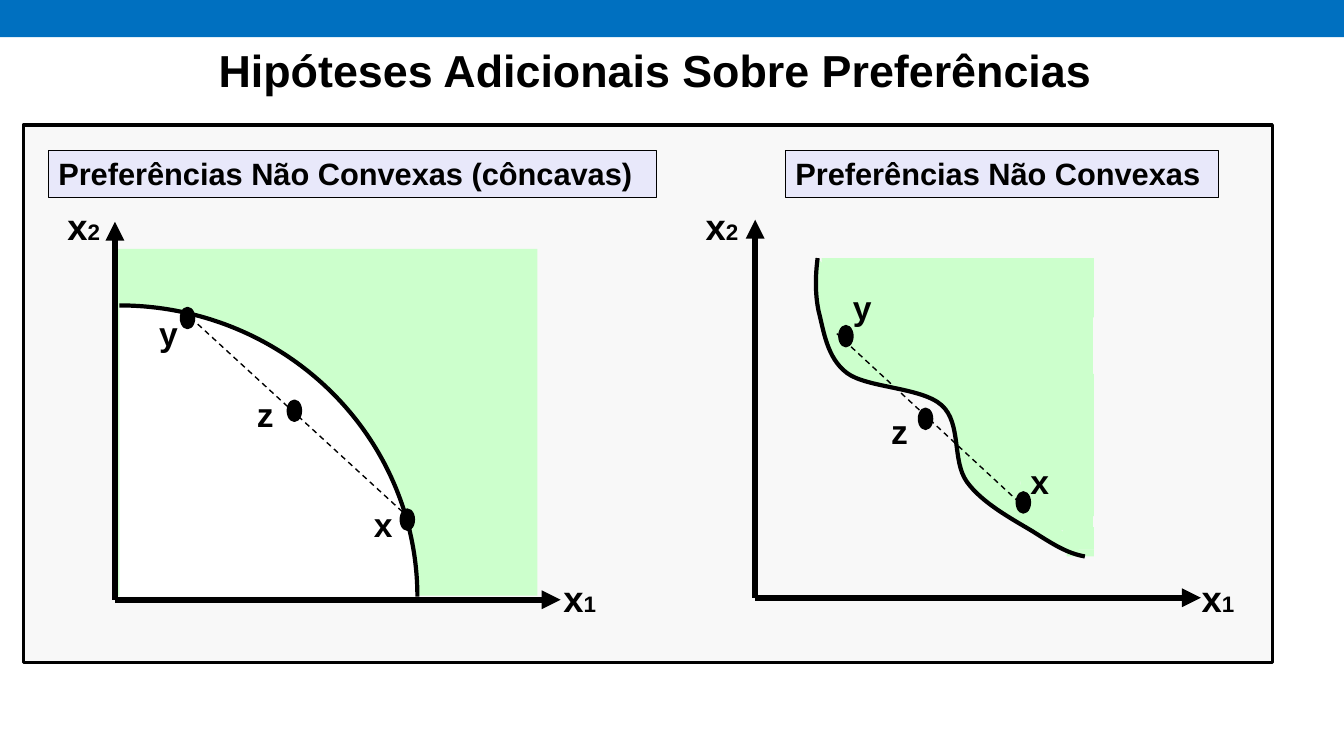
import math
from lxml import etree
from pptx import Presentation
from pptx import util as u
from pptx.dml.color import RGBColor
from pptx.enum import dml, shapes, text
from pptx.oxml.ns import qn

BLACK, GREEN, WHITE = "000000", "CCFFCC", "FFFFFF"
SHAPE = shapes.MSO_SHAPE
CURVE_TILT = 6.9
CURVE_CENTER = (9.435, 4.04)
CURVE = [
    (8.11, 2.56),
    (8.09, 2.71), (8.08, 2.90), (8.12, 3.09),
    (8.17, 3.28), (8.20, 3.55), (8.40, 3.70),
    (8.60, 3.85), (9.14, 3.84), (9.34, 4.02),
    (9.54, 4.20), (9.44, 4.57), (9.59, 4.78),
    (9.74, 4.99), (10.04, 5.15), (10.24, 5.27),
    (10.43, 5.39), (10.58, 5.49), (10.76, 5.52),
]
REGION_UNDER_CURVE = [
    (10.58, 5.45, 0.27, 0.07), (10.54, 5.23, 0.31, 0.22), (10.12, 3.85, 0.73, 1.27),
    (9.12, 3.71, 1.73, 0.15), (8.45, 3.03, 2.39, 0.68), (8.15, 2.56, 2.7, 0.59),
]
CONCAVE = {
    "heading": ("Preferências Não Convexas (côncavas)", 0.48, 6.03),
    "origin": (1.14, 5.95), "axis_labels": (0.57, 5.49),
    "chord": (1.89, 3.15, 4.06, 5.14),
    "points": [("x", (3.97, 5.05), (3.61, 4.95), 0.28),
               ("y", (1.79, 3.05), (1.48, 3.06), 0.28),
               ("z", (2.85, 3.97), (2.45, 3.86), 0.33)],
}
WAVY = {
    "heading": ("Preferências Não Convexas", 7.79, 4.3),
    "origin": (7.49, 5.93), "axis_labels": (6.9, 11.82),
    "chord": (8.3, 3.31, 10.18, 5.05),
    "points": [("z", (9.11, 4.05), (8.74, 4.03), 0.33),
               ("y", (8.32, 3.23), (8.36, 2.8), 0.28),
               ("x", (10.08, 4.88), (10.12, 4.52), 0.28)],
}


def color(value):
    return RGBColor.from_string(value)


def apply(target, values):
    for name, value in values.items():
        setattr(target, name, value)


def paint(shape, fill, width=0):
    shape.shadow.inherit = False
    shape.fill.solid()
    shape.fill.fore_color.rgb = color(fill)
    if width:
        shape.line.color.rgb = color(BLACK)
        shape.line.width = u.Pt(width)
    else:
        shape.line.fill.background()


def add_shape(page, kind, area, fill, width=0):
    shape = page.shapes.add_shape(kind, *map(u.Inches, area))
    paint(shape, fill, width)
    return shape


def write(frame, spans, align=text.PP_ALIGN.LEFT, **frame_values):
    apply(frame, frame_values)
    para = frame.paragraphs[0]
    para.alignment = align
    for words, size in spans:
        span = para.add_run()
        span.text = words
        apply(span.font, {"name": "Arial", "size": u.Pt(size), "bold": True})
        span.font.color.rgb = color(BLACK)


def add_label(page, area, spans, wrap):
    box = page.shapes.add_textbox(*map(u.Inches, area))
    write(box.text_frame, spans, word_wrap=wrap,
          auto_size=text.MSO_AUTO_SIZE.SHAPE_TO_FIT_TEXT)


def add_line(page, ends, width, arrow=None, dashed=False):
    line = page.shapes.add_connector(shapes.MSO_CONNECTOR.STRAIGHT, *map(u.Inches, ends))
    line.line.color.rgb = color(BLACK)
    line.line.width = u.Pt(width)
    if dashed:
        line.line.dash_style = dml.MSO_LINE.DASH
    if arrow:
        etree.SubElement(line.line._get_or_add_ln(), qn(arrow), type="triangle")
    etree.SubElement(line._element.spPr, qn("a:effectLst"))


def turn_back(point):
    angle = math.radians(CURVE_TILT)
    dx, dy = (value - middle for value, middle in zip(point, CURVE_CENTER))
    return (u.Inches(CURVE_CENTER[0] + dx * math.cos(angle) + dy * math.sin(angle)),
            u.Inches(CURVE_CENTER[1] - dx * math.sin(angle) + dy * math.cos(angle)))


def add_curve(page):
    start, *rest = map(turn_back, CURVE)
    builder = page.shapes.build_freeform(*start)
    builder.add_line_segments(rest, close=False)
    curve = builder.convert_to_shape()
    segments = list(curve._element.iter(qn("a:lnTo")))
    outline = segments[0].getparent()
    for index in range(0, len(segments), 3):
        bend = etree.SubElement(outline, qn("a:cubicBezTo"))
        for segment in segments[index:index + 3]:
            bend.append(segment[0])
            outline.remove(segment)
    curve.rotation = CURVE_TILT
    paint(curve, GREEN, 3)


def add_axes(page, origin, label_lefts):
    left, bottom = origin
    add_line(page, (left, bottom - 3.75, left, bottom), 4.5, "a:headEnd")
    add_line(page, (left, bottom, left + 4.42, bottom), 4.5, "a:tailEnd")
    for number, x, y in zip("21", label_lefts, (1.98, 5.67)):
        add_label(page, (x, y, 0.53, 0.54), [("x", 26), (number, 16)], False)


def add_heading(page, words, left, width):
    box = add_shape(page, SHAPE.RECTANGLE, (left, 1.49, width, 0.47), "E8E8FA", 0.75)
    write(box.text_frame, [(words, 22)], word_wrap=True,
          vertical_anchor=text.MSO_ANCHOR.TOP,
          auto_size=text.MSO_AUTO_SIZE.SHAPE_TO_FIT_TEXT)


def add_graph(page, graph):
    add_heading(page, *graph["heading"])
    add_axes(page, graph["origin"], graph["axis_labels"])
    add_line(page, graph["chord"], 1, dashed=True)
    for name, dot, label, width in graph["points"]:
        add_shape(page, SHAPE.OVAL, (*dot, 0.14, 0.21), BLACK, 1)
        add_label(page, (*label, width, 0.5), [(name, 24)], True)


def add_title(page, words):
    title = page.shapes.title
    apply(title, {"left": u.Inches(2.04), "top": u.Inches(0.15),
                  "width": u.Inches(8.92), "height": u.Inches(0.86)})
    write(title.text_frame, [(words, 32)], text.PP_ALIGN.CENTER,
          auto_size=text.MSO_AUTO_SIZE.NONE, vertical_anchor=text.MSO_ANCHOR.BOTTOM)
    page.shapes._spTree.append(title._element)


def add_layout_bar(page):
    bar = add_shape(page, SHAPE.RECTANGLE, (0, -0.03, 13.33, 0.4), "0070C0")
    page.slide_layout.shapes._spTree.append(bar._element)


def main():
    deck = Presentation()
    apply(deck, {"slide_width": u.Inches(13.33), "slide_height": u.Inches(7.5)})
    page = deck.slides.add_slide(deck.slide_layouts[5])
    add_layout_bar(page)
    add_shape(page, SHAPE.RECTANGLE, (0.23, 1.24, 12.39, 5.33), "F8F8F8", 2.25)
    for area in REGION_UNDER_CURVE:
        add_shape(page, SHAPE.RECTANGLE, area, GREEN)
    add_curve(page)
    add_shape(page, SHAPE.RECTANGLE, (1.14, 2.47, 4.19, 3.44), GREEN)
    add_shape(page, SHAPE.ARC, (-1.77, 3.03, 5.91, 5.78), WHITE, 3)
    add_graph(page, CONCAVE)
    add_graph(page, WAVY)
    corner = add_shape(page, SHAPE.ISOSCELES_TRIANGLE, (9.17, 3.49, 1.24, 1.18), GREEN)
    corner.rotation = 294.4
    add_shape(page, SHAPE.RECTANGLE, (10.4, 5.05, 0.44, 0.21), GREEN)
    add_title(page, "Hipóteses Adicionais Sobre Preferências")
    deck.save("out.pptx")


if __name__ == "__main__":
    main()
